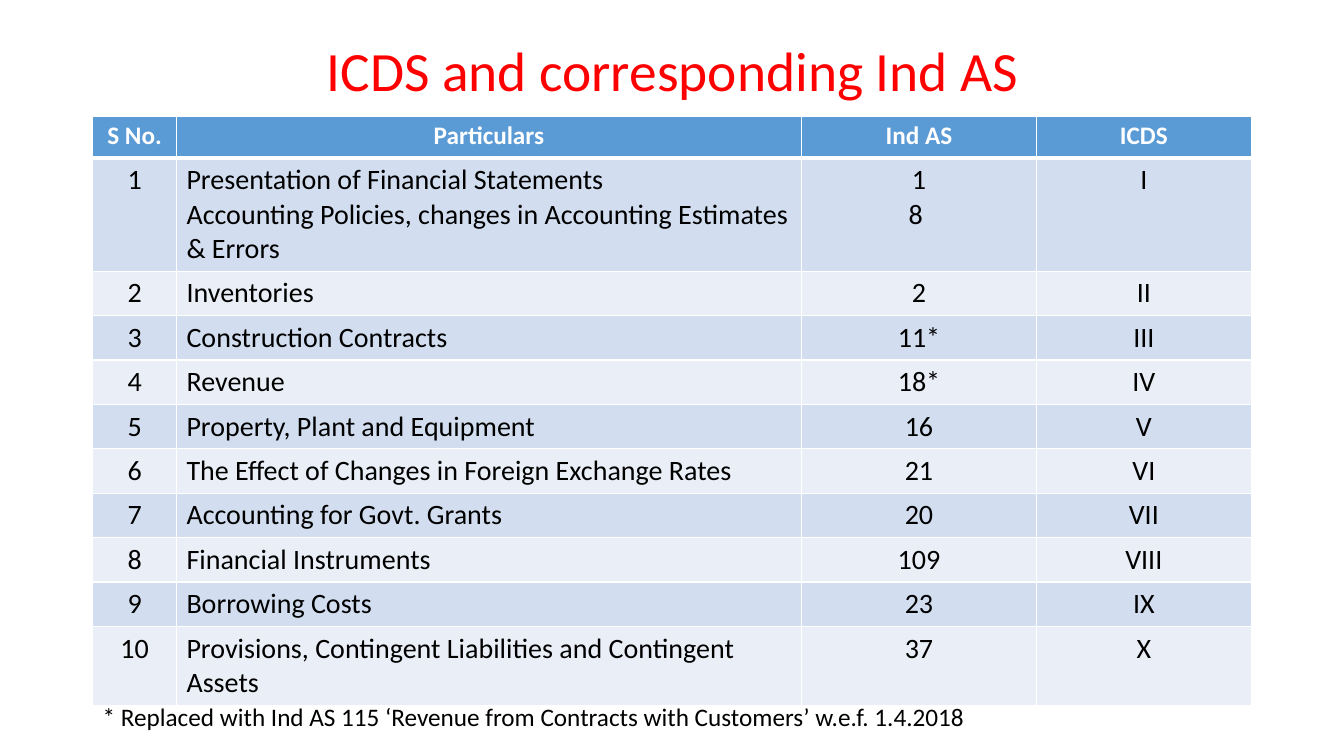
"""Build a slide that maps ICDS to the corresponding Ind AS."""
import lxml.etree
import pptx
import pptx.dml.color
import pptx.enum.text
import pptx.oxml.ns
import pptx.util

TITLE = "ICDS and corresponding Ind AS"
HEADINGS = ["S No.", "Particulars", "Ind AS", "ICDS"]
STANDARDS = [
    ("Presentation of Financial Statements\n"
     "Accounting Policies, changes in Accounting Estimates & Errors", "1\n8 ", "I"),
    ("Inventories", "2", "II"),
    ("Construction Contracts", "11*", "III"),
    ("Revenue", "18*", "IV"),
    ("Property, Plant and Equipment", "16", "V"),
    ("The Effect of Changes in Foreign Exchange Rates", "21", "VI"),
    ("Accounting for Govt. Grants", "20", "VII"),
    ("Financial Instruments", "109", "VIII"),
    ("Borrowing Costs", "23", "IX"),
    ("Provisions, Contingent Liabilities and Contingent Assets", "37", "X"),
]
FOOTNOTE = "* Replaced with Ind AS 115 ‘Revenue from Contracts with Customers’ w.e.f. 1.4.2018"

COLORS = {"title": "FF0000", "header": "5B9BD5", "odd": "D2DEEF", "even": "EAEFF7",
          "white": "FFFFFF", "black": "000000"}
FONT = "Calibri"
SLIDE_WIDTH, SLIDE_HEIGHT = 13.33, 7.5
LEFT, WIDTH = 0.92, 11.5
TITLE_TOP, TITLE_HEIGHT = 0.4, 0.65
TABLE_TOP = 1.15
FOOTNOTE_TOP, FOOTNOTE_HEIGHT = 6.91, 0.4
COLUMN_WIDTHS = [0.83, 6.2, 2.33, 2.13]
ROW_HEIGHTS = [0.42, 1.07] + [0.42] * 8 + [0.75]
PARTICULARS_COLUMN = 1

inches = pptx.util.Inches
ALIGN = pptx.enum.text.PP_ALIGN


def rgb(name):
    """Return the named colour."""
    return pptx.dml.color.RGBColor.from_string(COLORS[name])


def write(frame, text, size=20, color="black", bold=False, align=ALIGN.LEFT, spacing=None):
    """Fill a text frame, one paragraph for each line of text."""
    frame.word_wrap = True
    for number, line in enumerate(text.split("\n")):
        paragraph = frame.add_paragraph() if number else frame.paragraphs[0]
        paragraph.alignment = align
        paragraph.line_spacing = spacing
        run = paragraph.add_run()
        run.text = line
        run.font.name = FONT
        run.font.size = pptx.util.Pt(size)
        run.font.bold = bold
        run.font.color.rgb = rgb(color)


def set_borders(cell, **points):
    """Draw white cell borders, with widths keyed by side letter."""
    qn = pptx.oxml.ns.qn
    properties = cell._tc.get_or_add_tcPr()
    for side, width in points.items():
        line = lxml.etree.SubElement(properties, qn(f"a:ln{side}"), w=str(pptx.util.Pt(width)))
        fill = lxml.etree.SubElement(line, qn("a:solidFill"))
        lxml.etree.SubElement(fill, qn("a:srgbClr"), val=COLORS["white"])


def add_standards_table(slide):
    """Add the table of standards."""
    rows = [HEADINGS] + [(str(n), *standard) for n, standard in enumerate(STANDARDS, 1)]
    table = slide.shapes.add_table(
        len(rows), len(HEADINGS), inches(LEFT), inches(TABLE_TOP),
        inches(WIDTH), inches(sum(ROW_HEIGHTS))).table
    for column, width in zip(table.columns, COLUMN_WIDTHS):
        column.width = inches(width)
    for row, height in zip(table.rows, ROW_HEIGHTS):
        row.height = inches(height)
    for r, texts in enumerate(rows):
        header = r == 0
        band = "header" if header else "odd" if r % 2 else "even"
        for c, text in enumerate(texts):
            cell = table.cell(r, c)
            set_borders(cell, L=1, R=1, T=3 if r == 1 else 1, B=3 if header else 1)
            cell.fill.solid()
            cell.fill.fore_color.rgb = rgb(band)
            left_aligned = c == PARTICULARS_COLUMN and not header
            write(cell.text_frame, text, size=18 if header else 20, bold=header,
                  color="white" if header else "black",
                  align=ALIGN.LEFT if left_aligned else ALIGN.CENTER)


def main():
    """Build and save the slide."""
    deck = pptx.Presentation()
    deck.slide_width, deck.slide_height = inches(SLIDE_WIDTH), inches(SLIDE_HEIGHT)
    slide = deck.slides.add_slide(deck.slide_layouts.get_by_name("Title Only"))

    title = slide.shapes.title
    title.left, title.top = inches(LEFT), inches(TITLE_TOP)
    title.width, title.height = inches(WIDTH), inches(TITLE_HEIGHT)
    title.text_frame.vertical_anchor = pptx.enum.text.MSO_ANCHOR.MIDDLE
    write(title.text_frame, TITLE, size=39.6, color="title", align=ALIGN.CENTER, spacing=0.9)

    add_standards_table(slide)

    footnote = slide.shapes.add_textbox(
        inches(LEFT), inches(FOOTNOTE_TOP), inches(WIDTH), inches(FOOTNOTE_HEIGHT))
    write(footnote.text_frame, FOOTNOTE, size=18)
    deck.save("out.pptx")


if __name__ == "__main__":
    main()
